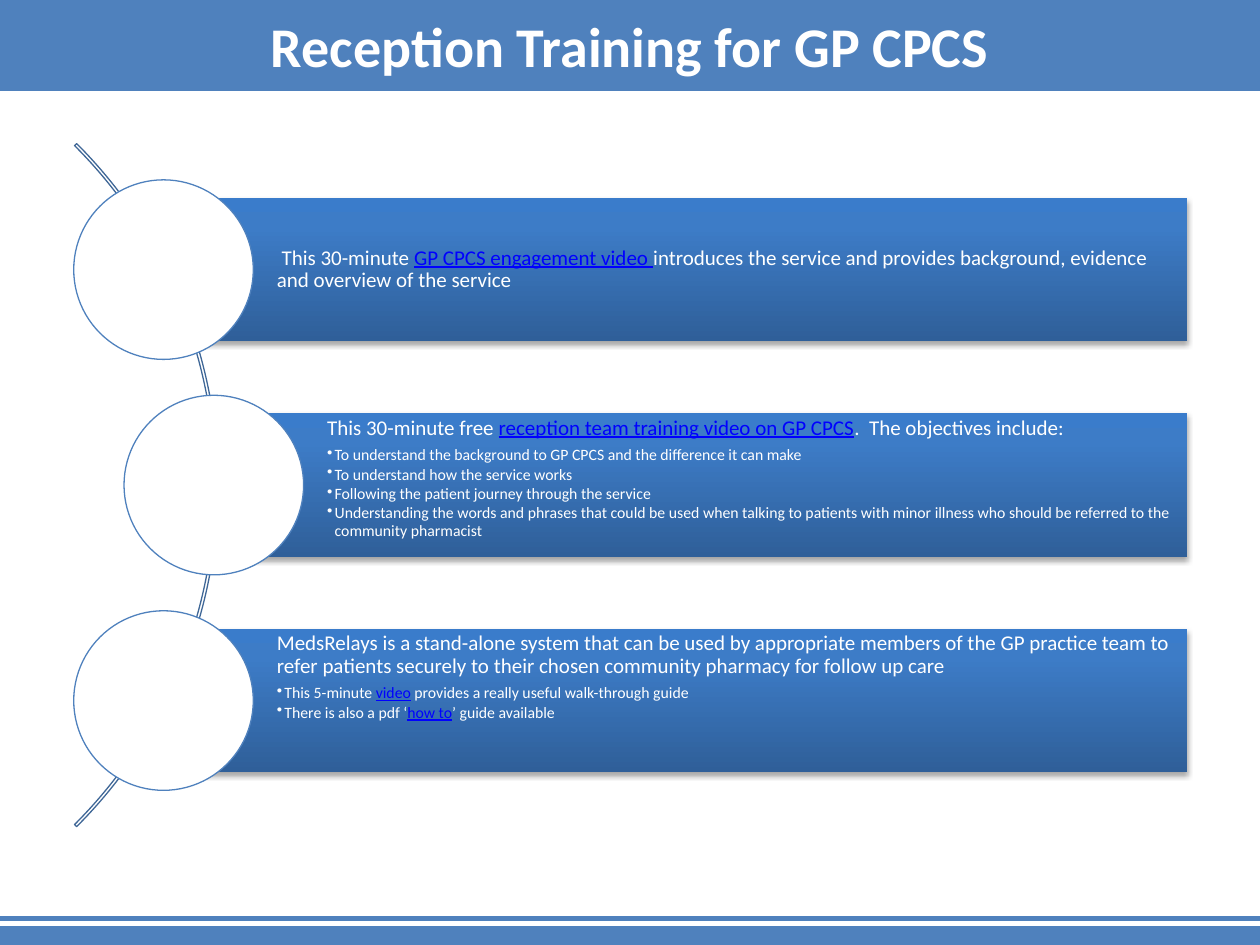
from dataclasses import dataclass

from lxml import etree
from pptx import Presentation
from pptx.dml.color import RGBColor
from pptx.enum.shapes import MSO_CONNECTOR, MSO_SHAPE
from pptx.enum.text import MSO_ANCHOR, PP_ALIGN
from pptx.oxml import parse_xml
from pptx.oxml.ns import qn
from pptx.util import Emu, Inches, Pt

RECTANGLE, OVAL, BLOCK_ARC = MSO_SHAPE.RECTANGLE, MSO_SHAPE.OVAL, MSO_SHAPE.BLOCK_ARC
STRAIGHT = MSO_CONNECTOR.STRAIGHT
TOP, MIDDLE = MSO_ANCHOR.TOP, MSO_ANCHOR.MIDDLE
LEFT, CENTER = PP_ALIGN.LEFT, PP_ALIGN.CENTER
NAMESPACE = 'xmlns:a="http://schemas.openxmlformats.org/drawingml/2006/main"'


@dataclass(frozen=True)
class Theme:
    """Colours, font and type sizes of the slide."""
    font: str = "Calibri"
    blue: str = "4F81BD"
    arc: str = "3F6797"
    white: str = "FFFFFF"
    link: str = "0000FF"
    shadow: str = "000000"
    gradient: tuple = ((0, "2F5F99"), (80, "3D7CC7"), (100, "3A7CCB"))
    title: int = 32
    heading: int = 12
    bullet: int = 9


THEME = Theme()
NEAR, FAR = 0.14, 0.21

ROWS = [
    (NEAR, MIDDLE, [
        [(" This 30-minute ", False), ("GP CPCS engagement video ", True),
         ("introduces the service and provides background, evidence and overview of the service", False)],
    ]),
    (FAR, TOP, [
        [("This 30-minute free ", False), ("reception team training video on GP CPCS", True),
         (".  The objectives include:", False)],
        [("To understand the background to GP CPCS and the difference it can make", False)],
        [("To understand how the service works", False)],
        [("Following the patient journey through the service", False)],
        [("Understanding the words and phrases that could be used when talking to patients "
          "with minor illness who should be referred to the community pharmacist", False)],
    ]),
    (NEAR, TOP, [
        [("MedsRelays is a stand-alone system that can be used by appropriate members of the GP "
          "practice team to refer patients securely to their chosen community pharmacy for follow up care", False)],
        [("This 5-minute ", False), ("video", True), (" provides a really useful walk-through guide", False)],
        [("There is also a pdf ‘", False), ("how to", True), ("’ guide available", False)],
    ]),
]


def add_shape(slide, kind, box, fill=None, line=None, width=0.75):
    """Add a preset shape with a plain fill and outline."""
    shape = slide.shapes.add_shape(kind, *(Emu(round(length)) for length in box))
    shape.shadow.inherit = False
    if fill:
        shape.fill.solid()
        shape.fill.fore_color.rgb = RGBColor.from_string(fill)
    else:
        shape.fill.background()
    if line:
        shape.line.color.rgb = RGBColor.from_string(line)
        shape.line.width = Pt(width)
    else:
        shape.line.fill.background()
    return shape


def add_run(paragraph, text, size, color, bold=False, underline=False):
    """Add one formatted run to a paragraph."""
    run = paragraph.add_run()
    run.text = text
    run.font.name = THEME.font
    run.font.size = Pt(size)
    run.font.bold = bold
    run.font.underline = underline
    run.font.color.rgb = RGBColor.from_string(color)


def style_bar(bar):
    """Give a bar its vertical gradient and soft shadow."""
    stops = "".join(f'<a:gs pos="{share * 1000}"><a:srgbClr val="{color}"/></a:gs>'
                    for share, color in THEME.gradient)
    gradient = parse_xml(f'<a:gradFill {NAMESPACE} rotWithShape="1"><a:gsLst>{stops}</a:gsLst>'
                         '<a:lin ang="16200000" scaled="0"/></a:gradFill>')
    shadow = parse_xml(f'<a:outerShdw {NAMESPACE} blurRad="{Pt(3.1)}" dist="{Pt(1.8)}" dir="5400000" '
                       f'rotWithShape="0"><a:srgbClr val="{THEME.shadow}"><a:alpha val="35000"/>'
                       '</a:srgbClr></a:outerShdw>')
    properties = bar.element.spPr
    properties.replace(properties.find(qn("a:noFill")), gradient)
    properties.find(qn("a:effectLst")).append(shadow)


def fill_text(frame, paragraphs, anchor):
    """Write a heading followed by bulleted lines."""
    frame.word_wrap = True
    frame.vertical_anchor = anchor
    frame.margin_left = Inches(0.9)
    frame.margin_right = frame.margin_top = frame.margin_bottom = Inches(0.03)
    for index, runs in enumerate(paragraphs):
        paragraph = frame.add_paragraph() if index else frame.paragraphs[0]
        paragraph.alignment = LEFT
        paragraph.line_spacing = 0.9
        size = THEME.bullet if index else THEME.heading
        paragraph.space_after = Pt(size * (0.15 if index else 0.35))
        if index:
            paragraph.level = 1
            properties = paragraph.element.get_or_add_pPr() if hasattr(paragraph, "element") else paragraph._p.get_or_add_pPr()
            properties.set("marL", str(Inches(0.06)))
            properties.set("indent", str(-Inches(0.06)))
            etree.SubElement(properties, qn("a:buChar")).set("char", "•")
        for text, linked in runs:
            add_run(paragraph, text, size, THEME.link if linked else THEME.white, underline=linked)


def add_row(slide, box, circle_size, anchor, paragraphs):
    """Place a text bar with a circle centred on its left edge."""
    left, top, width, height = box
    bar = add_shape(slide, RECTANGLE, box)
    style_bar(bar)
    fill_text(bar.text_frame, paragraphs, anchor)
    circle_box = (left - circle_size / 2, top + (height - circle_size) / 2, circle_size, circle_size)
    add_shape(slide, OVAL, circle_box, THEME.white, THEME.blue)


def add_curved_list(slide, box):
    """Place the arc and the rows that follow its curve."""
    left, top, width, height = box
    diameter = height * 1.345
    arc_box = (left + height * 0.216 - diameter, top + (height - diameter) / 2, diameter, diameter)
    arc = add_shape(slide, BLOCK_ARC, arc_box, line=THEME.arc)
    for index, value in enumerate((189, 27, 0.003)):
        arc.adjustments[index] = value
    for index, (indent, anchor, paragraphs) in enumerate(ROWS):
        offset = height * indent
        row_box = (left + offset, top + height * (0.1 + 0.3 * index), width - offset, height * 0.2)
        add_row(slide, row_box, height * 0.25, anchor, paragraphs)


def add_header(slide, box):
    """Place the title on its coloured band."""
    left, top, width, height = box
    band = add_shape(slide, RECTANGLE, box, THEME.blue, THEME.blue, 2)
    title = slide.shapes.title
    band.element.addnext(title.element)
    title.left, title.top = Emu(round(left + width * 0.05)), top
    title.width, title.height = Emu(round(width * 0.9)), height
    title.text_frame.vertical_anchor = MIDDLE
    paragraph = title.text_frame.paragraphs[0]
    paragraph.alignment = CENTER
    add_run(paragraph, "Reception Training for GP CPCS", THEME.title, THEME.white, bold=True)


def add_footer(slide, box):
    """Place the rule and the band at the foot of the slide."""
    left, top, width, height = box
    rule = slide.shapes.add_connector(STRAIGHT, left, top, left + width, top)
    rule.line.color.rgb = RGBColor.from_string(THEME.blue)
    rule.line.width = Pt(3)
    etree.SubElement(rule.element.spPr, qn("a:effectLst"))
    band_box = (left, top + height / 3, width, height * 2 / 3)
    add_shape(slide, RECTANGLE, band_box, THEME.blue, THEME.blue, 2)


def main():
    """Build and save the presentation."""
    presentation = Presentation()
    presentation.slide_width, presentation.slide_height = Inches(10), Inches(7.5)
    slide = presentation.slides.add_slide(presentation.slide_layouts[5])
    width = presentation.slide_width
    add_footer(slide, (0, Inches(7.29), width, Inches(0.21)))
    add_header(slide, (0, 0, width, Inches(0.71)))
    add_curved_list(slide, (Inches(0.5), Inches(1), Inches(8.92), Inches(5.7)))
    presentation.save("out.pptx")


if __name__ == "__main__":
    main()
